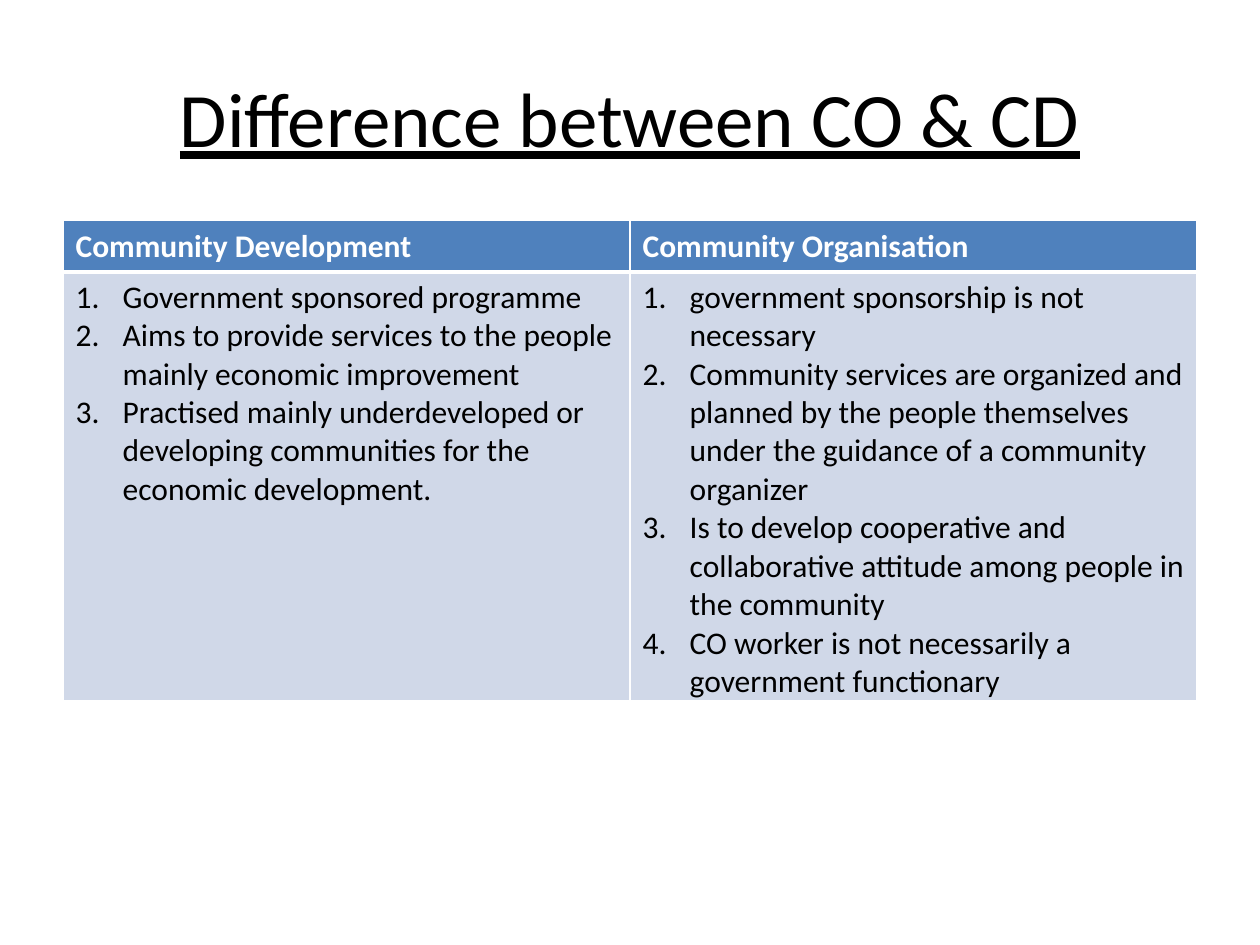
from lxml import etree
from pptx import Presentation
from pptx.dml.color import RGBColor
from pptx.enum.text import MSO_ANCHOR, PP_ALIGN
from pptx.oxml.ns import qn
from pptx.util import Cm, Pt

CENTER = PP_ALIGN.CENTER
MIDDLE = MSO_ANCHOR.MIDDLE
BLANK_LAYOUT = 6
FONT = "Calibri"
BLACK, WHITE = "000000", "FFFFFF"
HEADER_FILL, BODY_FILL = "4F81BD", "D0D8E8"
LEFT, WIDTH = Cm(1.27), Cm(22.86)
HEADER_HEIGHT, BODY_HEIGHT = Cm(1.03), Cm(8.65)
NUMBER_INDENT = Cm(0.95)
THIN, THICK = Pt(1), Pt(3)

COLUMNS = {
    "Community Development": [
        "Government sponsored programme",
        "Aims to provide services to the people mainly economic improvement",
        "Practised mainly underdeveloped or developing communities for the "
        "economic development.",
    ],
    "Community Organisation": [
        "government sponsorship is not necessary",
        "Community services are organized and planned by the people themselves "
        "under the guidance of a community organizer",
        "Is to develop cooperative and collaborative attitude among people in "
        "the community",
        "CO worker is not necessarily a government functionary",
    ],
}


def color(hex_value):
    return RGBColor.from_string(hex_value)


def add_run(paragraph, text, size, hex_value, bold=False, underline=False):
    run = paragraph.add_run()
    run.text = text
    font = run.font
    font.name, font.size = FONT, Pt(size)
    font.bold, font.underline = bold, underline
    font.color.rgb = color(hex_value)


def add_title(slide, text):
    box = slide.shapes.add_textbox(LEFT, Cm(0.76), WIDTH, Cm(3.18))
    frame = box.text_frame
    frame.word_wrap = True
    frame.vertical_anchor = MIDDLE
    paragraph = frame.paragraphs[0]
    paragraph.alignment = CENTER
    add_run(paragraph, text, 44, BLACK, underline=True)


def number_paragraph(paragraph):
    """Give the paragraph a hanging automatic number."""
    properties = paragraph._p.get_or_add_pPr()
    properties.set("marL", str(NUMBER_INDENT))
    properties.set("indent", str(-NUMBER_INDENT))
    etree.SubElement(properties, qn("a:buFont"), typeface="+mj-lt")
    etree.SubElement(properties, qn("a:buAutoNum"), type="arabicPeriod")


def style_cell(cell, fill, top=THIN, bottom=THIN):
    """Draw white borders and fill the cell; borders must precede the fill."""
    properties = cell._tc.get_or_add_tcPr()
    for side, width in (("L", THIN), ("R", THIN), ("T", top), ("B", bottom)):
        line = etree.SubElement(properties, qn(f"a:ln{side}"), w=str(width))
        solid = etree.SubElement(line, qn("a:solidFill"))
        etree.SubElement(solid, qn("a:srgbClr"), val=WHITE)
    cell.fill.solid()
    cell.fill.fore_color.rgb = color(fill)


def fill_list_cell(cell, items):
    frame = cell.text_frame
    for index, item in enumerate(items):
        paragraph = frame.add_paragraph() if index else frame.paragraphs[0]
        number_paragraph(paragraph)
        add_run(paragraph, item, 18, BLACK)


def add_comparison_table(slide, columns):
    table = slide.shapes.add_table(
        2, len(columns), LEFT, Cm(4.45), WIDTH, HEADER_HEIGHT + BODY_HEIGHT
    ).table
    table.rows[0].height, table.rows[1].height = HEADER_HEIGHT, BODY_HEIGHT
    for index, (heading, items) in enumerate(columns.items()):
        header, body = table.cell(0, index), table.cell(1, index)
        style_cell(header, HEADER_FILL, bottom=THICK)
        add_run(header.text_frame.paragraphs[0], heading, 18, WHITE, bold=True)
        style_cell(body, BODY_FILL, top=THICK)
        fill_list_cell(body, items)


def main():
    presentation = Presentation()
    presentation.slide_width, presentation.slide_height = Cm(25.4), Cm(19.05)
    slide = presentation.slides.add_slide(presentation.slide_layouts[BLANK_LAYOUT])
    add_title(slide, "Difference between CO & CD")
    add_comparison_table(slide, COLUMNS)
    presentation.save("out.pptx")


if __name__ == "__main__":
    main()
